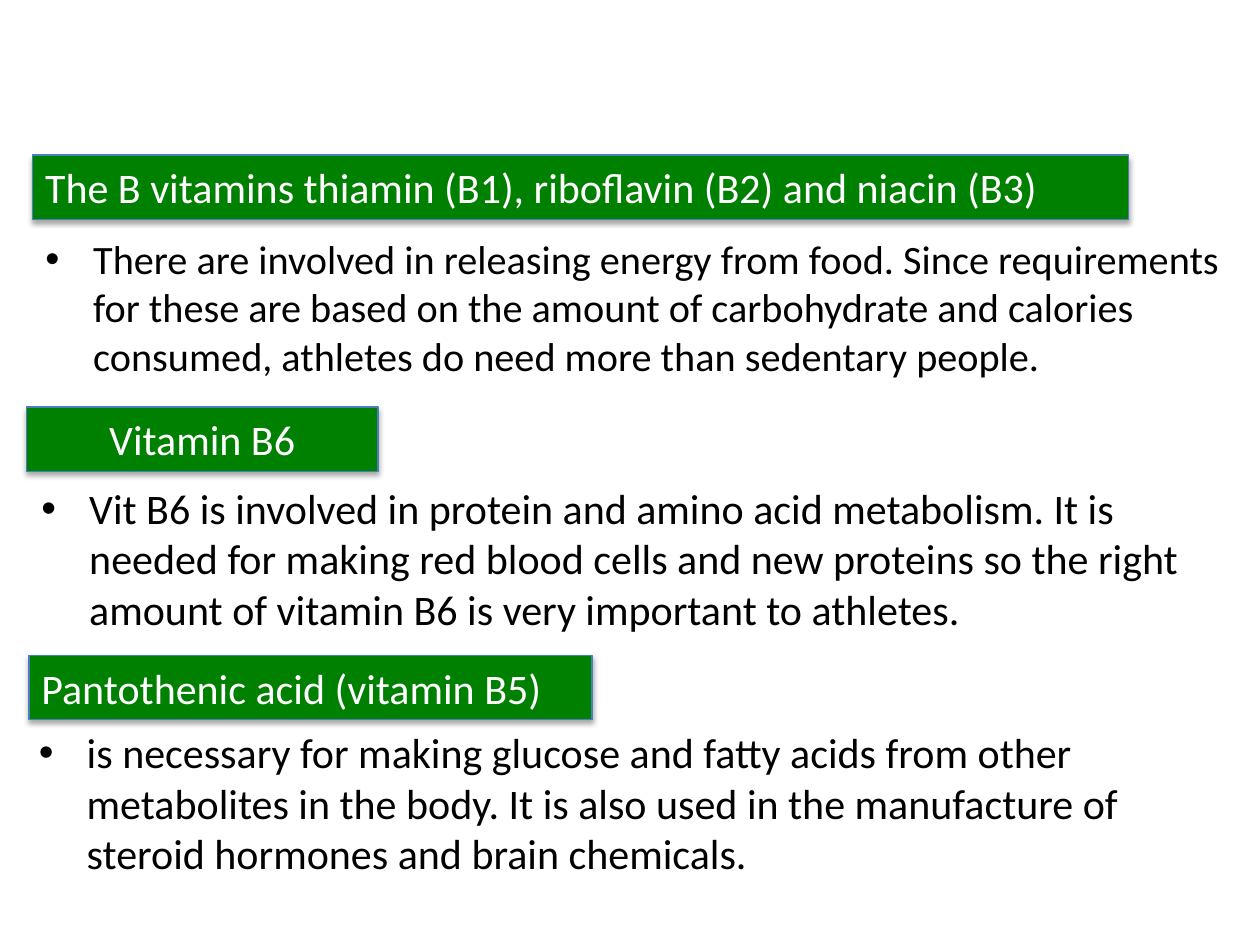
from dataclasses import dataclass

from lxml.etree import SubElement
from pptx import Presentation
from pptx.dml.color import RGBColor
from pptx.enum.shapes import MSO_SHAPE
from pptx.enum.text import MSO_ANCHOR, MSO_AUTO_SIZE, PP_ALIGN
from pptx.oxml.ns import qn
from pptx.util import Emu, Inches, Pt

BLACK = RGBColor(0x00, 0x00, 0x00)
WHITE = RGBColor(0xFF, 0xFF, 0xFF)
GREEN = RGBColor(0x00, 0x80, 0x00)
BLUE = RGBColor(0x4B, 0x7E, 0xBC)

HEADING_HEIGHT = 0.51
BODY_WIDTH, BODY_HEIGHT = 9.62, 1.26
BULLET_INDENT = Inches(0.38)


@dataclass
class Heading:
    text: str
    left: float
    top: float
    width: float
    align: PP_ALIGN = PP_ALIGN.LEFT


@dataclass
class Body:
    text: str
    left: float
    top: float
    size: int = 24


@dataclass
class Section:
    heading: Heading
    body: Body


SECTIONS = [
    Section(
        Heading("The B vitamins thiamin (B1), riboflavin (B2) and niacin (B3)", 0.26, 1.23, 8.7),
        Body("There are involved in releasing energy from food. Since requirements for these "
             "are based on the amount of carbohydrate and calories consumed, athletes do need "
             "more than sedentary people.", 0.26, 1.81, 23),
    ),
    Section(
        Heading("Vitamin B6", 0.21, 3.23, 2.79, PP_ALIGN.CENTER),
        Body("Vit B6 is involved in protein and amino acid metabolism. It is needed for making "
             "red blood cells and new proteins so the right amount of vitamin B6 is very "
             "important to athletes.", 0.23, 3.78),
    ),
    Section(
        Heading("Pantothenic acid (vitamin B5)", 0.23, 5.2, 4.47),
        Body("is necessary for making glucose and fatty acids from other metabolites in the "
             "body. It is also used in the manufacture of steroid hormones and brain chemicals.",
             0.21, 5.72),
    ),
]


def write_text(shape, text: str, size: int, color: RGBColor, anchor: MSO_ANCHOR):
    """Put one formatted paragraph into the shape and return it."""
    frame = shape.text_frame
    frame_format = {"word_wrap": True, "auto_size": MSO_AUTO_SIZE.NONE, "vertical_anchor": anchor}
    for name, value in frame_format.items():
        setattr(frame, name, value)
    para = frame.paragraphs[0]
    para.space_before = Pt(0)
    span = para.add_run()
    span.text = text
    for name, value in {"name": "Calibri", "size": Pt(size)}.items():
        setattr(span.font, name, value)
    span.font.color.rgb = color
    return para


def add_soft_shadow(shape) -> None:
    shape.shadow.inherit = False
    effects = shape._element.spPr.find(qn("a:effectLst"))
    shadow = SubElement(effects, qn("a:outerShdw"), blurRad=str(Pt(3.1)), dist=str(Pt(1.8)),
                        dir="5400000", rotWithShape="0")
    color = SubElement(shadow, qn("a:srgbClr"), val=str(BLACK))
    SubElement(color, qn("a:alpha"), val="35000")


def add_heading(page, heading: Heading) -> None:
    box = page.shapes.add_shape(MSO_SHAPE.RECTANGLE, Inches(heading.left), Inches(heading.top),
                                Inches(heading.width), Inches(HEADING_HEIGHT))
    box.fill.solid()
    box.fill.fore_color.rgb = GREEN
    box.line.color.rgb = BLUE
    box.line.width = Pt(0.75)
    add_soft_shadow(box)
    para = write_text(box, heading.text, 24, WHITE, MSO_ANCHOR.MIDDLE)
    para.alignment = heading.align


def fill_body(box, body: Body) -> None:
    """Place the box and write its bulleted paragraph."""
    place = {"left": body.left, "top": body.top, "width": BODY_WIDTH, "height": BODY_HEIGHT}
    for name, value in place.items():
        setattr(box, name, Inches(value))
    para = write_text(box, body.text, body.size, BLACK, MSO_ANCHOR.TOP)
    para.alignment = PP_ALIGN.LEFT
    properties = para._p.get_or_add_pPr()
    properties.set("marL", str(BULLET_INDENT))
    properties.set("indent", str(-BULLET_INDENT))
    SubElement(properties, qn("a:buFont"), typeface="Arial")
    SubElement(properties, qn("a:buChar"), char="•")


def main() -> None:
    deck = Presentation()
    deck.slide_width, deck.slide_height = Inches(10), Inches(7.5)
    page = deck.slides.add_slide(deck.slide_layouts[1])
    title = page.shapes.title._element
    title.getparent().remove(title)

    for number, section in enumerate(SECTIONS):
        add_heading(page, section.heading)
        if number == 0:
            box = page.placeholders[1]
        else:
            box = page.shapes.add_textbox(Emu(0), Emu(0), Emu(0), Emu(0))
        fill_body(box, section.body)

    deck.save("out.pptx")


if __name__ == "__main__":
    main()
